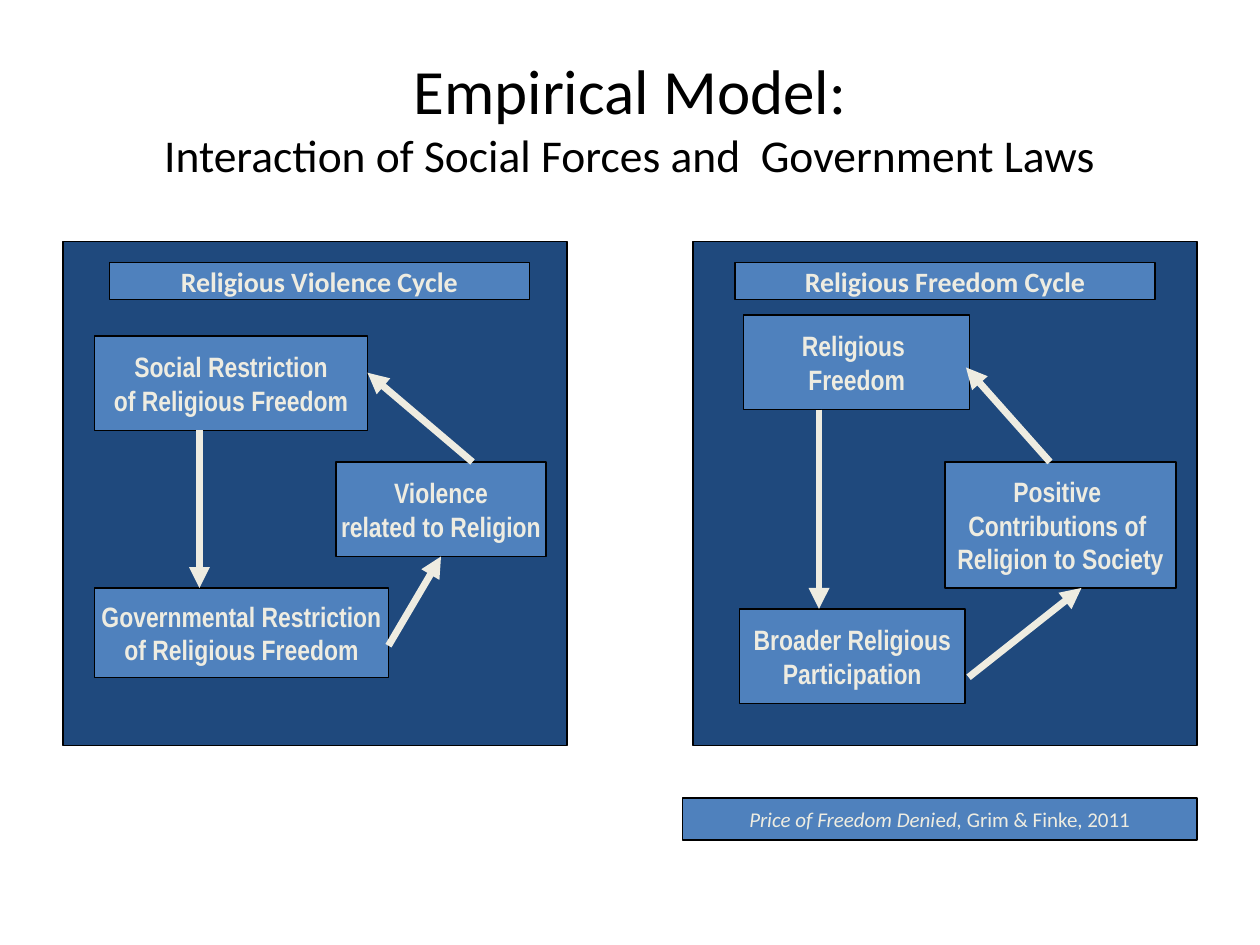
from lxml import etree
from pptx import Presentation
from pptx.dml.color import RGBColor
from pptx.enum.shapes import MSO_CONNECTOR, MSO_SHAPE
from pptx.enum.text import MSO_ANCHOR, PP_ALIGN
from pptx.oxml.ns import qn
from pptx.util import Pt

RECTANGLE = MSO_SHAPE.RECTANGLE
STRAIGHT = MSO_CONNECTOR.STRAIGHT
MIDDLE = MSO_ANCHOR.MIDDLE
CENTER = PP_ALIGN.CENTER

NAVY = RGBColor(0x1F, 0x49, 0x7D)
BLUE = RGBColor(0x4F, 0x81, 0xBD)
CREAM = RGBColor(0xEE, 0xEC, 0xE1)
BLACK = RGBColor(0x00, 0x00, 0x00)

TITLE_ONLY = 5
BODY_FONT = "Calibri"
STEP_FONT = "Arial Narrow"


def add_run(paragraph, text, *, size=16, font=BODY_FONT, color=CREAM,
            bold=False, italic=False):
    paragraph.alignment = CENTER
    run = paragraph.add_run()
    run.text = text
    run.font.size = Pt(size)
    run.font.name = font
    run.font.color.rgb = color
    run.font.bold = bold
    run.font.italic = italic


class CycleSlide:
    """Holds the slide and the style of its panels, boxes and arrows."""

    border_width = 0.75
    arrow_width = 4

    def __init__(self, slide):
        self.slide = slide

    def title(self, heading, subheading, left, top, width, height):
        title = self.slide.shapes.title
        title.left, title.top = Pt(left), Pt(top)
        title.width, title.height = Pt(width), Pt(height)
        title.text_frame.vertical_anchor = MIDDLE
        paragraph = title.text_frame.paragraphs[0]
        add_run(paragraph, heading, size=36, color=BLACK)
        paragraph.add_line_break()
        add_run(paragraph, subheading, size=26, color=BLACK)

    def rectangle(self, left, top, width, height, fill):
        shape = self.slide.shapes.add_shape(
            RECTANGLE, Pt(left), Pt(top), Pt(width), Pt(height))
        shape.shadow.inherit = False
        shape.fill.solid()
        shape.fill.fore_color.rgb = fill
        shape.line.color.rgb = BLACK
        shape.line.width = Pt(self.border_width)
        return shape

    def panel(self, left, top, size):
        self.rectangle(left, top, size, size, NAVY)

    def box(self, bounds, lines, **text_format):
        """Each line is a list of (text, extra format) pairs."""
        frame = self.rectangle(*bounds, BLUE).text_frame
        frame.word_wrap = False
        frame.vertical_anchor = MIDDLE
        for index, line in enumerate(lines):
            paragraph = frame.add_paragraph() if index else frame.paragraphs[0]
            for text, extra in line:
                add_run(paragraph, text, **{**text_format, **extra})

    def step(self, bounds, *lines):
        self.box(bounds, [[(line, {})] for line in lines],
                 font=STEP_FONT, bold=True)

    def heading(self, left, text):
        self.box((left, 150, 240, 21), [[(text, {})]], bold=True)

    def arrow(self, start, end):
        arrow = self.slide.shapes.add_connector(
            STRAIGHT, *(Pt(value) for value in start + end))
        arrow.line.color.rgb = CREAM
        arrow.line.width = Pt(self.arrow_width)
        properties = arrow.element.spPr
        outline = properties.find(qn("a:ln"))
        etree.SubElement(outline, qn("a:tailEnd"), type="triangle")
        etree.SubElement(properties, qn("a:effectLst"))


def main():
    presentation = Presentation()
    presentation.slide_width, presentation.slide_height = Pt(720), Pt(540)
    layout = presentation.slide_layouts[TITLE_ONLY]
    cycles = CycleSlide(presentation.slides.add_slide(layout))

    cycles.title("Empirical Model:",
                 "Interaction of Social Forces and  Government Laws",
                 36, 21.6, 648, 90)

    # Background panels
    for panel_left in (36, 396):
        cycles.panel(panel_left, 138, 288)

    # Steps of the freedom cycle
    cycles.step((425, 180, 129, 54), "Religious ", "Freedom")
    cycles.step((422.5, 348, 129, 54), "Broader Religious", "Participation")
    cycles.step((540, 264, 132, 72),
                "Positive ", "Contributions of ", "Religion to Society")

    # Steps of the violence cycle
    cycles.step((54, 192, 156, 54),
                "Social Restriction", "of Religious Freedom")
    cycles.step((192, 264, 120, 54), "Violence", "related to Religion")
    cycles.step((54, 336, 168, 51),
                "Governmental Restriction", "of Religious Freedom")

    # Arrows: freedom cycle, then violence cycle
    for start, end in (
        ((468, 234), (468, 348)),
        ((600, 264), (552, 210)),
        ((553.5, 387), (618, 336)),
        ((114, 246), (114, 336)),
        ((270, 264), (210, 213)),
        ((222, 369), (252, 318)),
    ):
        cycles.arrow(start, end)

    # Cycle headings
    cycles.heading(420, "Religious Freedom Cycle")
    cycles.heading(62.5, "Religious Violence Cycle")

    # Citation
    italic = {"italic": True}
    citation = [("Price of Freedom Deni", italic), ("e", {}),
                ("d, ", italic), ("Grim & Finke, 2011", {})]
    cycles.box((390, 456, 294, 24), [citation], size=12)

    presentation.save("out.pptx")


if __name__ == "__main__":
    main()
